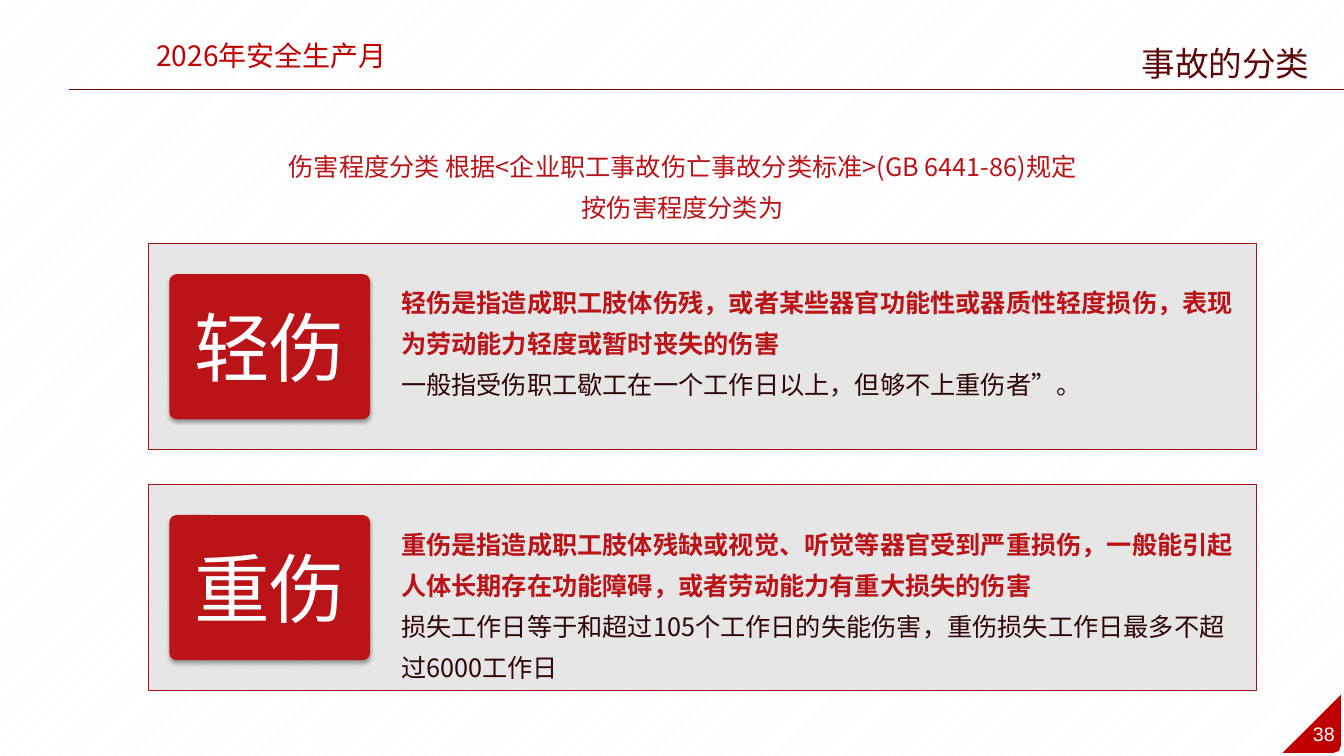
from lxml import etree
from pptx import Presentation
from pptx import util as u
from pptx.dml.color import RGBColor
from pptx.enum import dml, shapes, text
from pptx.oxml import ns

COLORS = {
    "white": "FFFFFF",
    "hatch": "F2F2F2",
    "panel": "D9D9D9",
    "panel_line": "A71116",
    "red": "BA1318",
    "bright_red": "C00000",
    "rule": "7C0D10",
    "title": "5D090C",
    "body": "2E0506",
    "shadow": "000000",
}
CHINESE_FONT = "Noto Sans CJK SC"
CENTER = text.PP_ALIGN.CENTER
LEFT = text.PP_ALIGN.LEFT

CARDS = [
    ("轻伤", 2.42, 2.7, 1.28,
     "轻伤是指造成职工肢体伤残，或者某些器官功能性或器质性轻度损伤，表现为劳动能力轻度或暂时丧失的伤害",
     "一般指受伤职工歇工在一个工作日以上，但够不上重伤者”。"),
    ("重伤", 4.81, 5.1, 1.69,
     "重伤是指造成职工肢体残缺或视觉、听觉等器官受到严重损伤，一般能引起人体长期存在功能障碍，或者劳动能力有重大损失的伤害",
     "损失工作日等于和超过105个工作日的失能伤害，重伤损失工作日最多不超过6000工作日"),
]


def rgb(name):
    return RGBColor.from_string(COLORS[name])


def box(*lengths):
    return [u.Inches(length) for length in lengths]


def add_element(parent, tag, **attributes):
    return etree.SubElement(parent, ns.qn(tag), attributes)


def format_paragraph(paragraph, size, color, bold=False, align=LEFT,
                     spacing=None, font_name=CHINESE_FONT):
    paragraph.alignment = align
    if spacing:
        paragraph.line_spacing = spacing
    for run in paragraph.runs:
        run.font.size = u.Pt(size)
        run.font.bold = bold
        run.font.color.rgb = rgb(color)
        run.font.name = font_name
        add_element(run.font._element, "a:ea", typeface=font_name)


def add_text(slide, position, lines, size, wrap=True, **options):
    text_frame = slide.shapes.add_textbox(*box(*position)).text_frame
    text_frame.word_wrap = wrap
    text_frame.auto_size = text.MSO_AUTO_SIZE.SHAPE_TO_FIT_TEXT
    text_frame.text = "\n".join(line for line, color, bold in lines)
    for paragraph, (line, color, bold) in zip(text_frame.paragraphs, lines):
        format_paragraph(paragraph, size, color, bold, **options)


def add_filled_shape(slide, kind, position, color):
    shape = slide.shapes.add_shape(kind, *box(*position))
    shape.shadow.inherit = False
    shape.fill.solid()
    shape.fill.fore_color.rgb = rgb(color)
    shape.line.fill.background()
    return shape


def add_panel(slide, top):
    panel = add_filled_shape(slide, shapes.MSO_SHAPE.RECTANGLE,
                             (1.47, top, 10.99, 2.04), "panel")
    panel.line.color.rgb = rgb("panel_line")
    panel.line.width = u.Pt(0.75)
    fill_color = panel._element.spPr.find(ns.qn("a:solidFill"))[0]
    add_element(fill_color, "a:alpha", val="64000")


def add_badge(slide, top, label):
    badge = add_filled_shape(slide, shapes.MSO_SHAPE.ROUNDED_RECTANGLE,
                             (1.68, top, 1.99, 1.44), "red")
    badge.adjustments[0] = 0.05
    effects = badge._element.spPr.find(ns.qn("a:effectLst"))
    shadow = add_element(effects, "a:outerShdw", blurRad=str(u.Pt(3.1)),
                         dist=str(u.Pt(1.8)), dir="5400000", rotWithShape="0")
    shadow_color = add_element(shadow, "a:srgbClr", val=COLORS["shadow"])
    add_element(shadow_color, "a:alpha", val="35000")
    badge.text_frame.text = label
    badge.text_frame.vertical_anchor = text.MSO_ANCHOR.MIDDLE
    format_paragraph(badge.text_frame.paragraphs[0], 54, "white", align=CENTER)


def add_card(slide, label, top, text_top, text_height, definition, detail):
    add_panel(slide, top)
    add_badge(slide, top + 0.3, label)
    add_text(slide, (3.88, text_top, 8.48, text_height),
             [(definition, "red", True), (detail, "body", False)],
             18, spacing=1.35)


def add_header_rule(slide):
    rule = slide.shapes.add_connector(shapes.MSO_CONNECTOR.STRAIGHT,
                                      *box(0.68, 0.89, 13.33, 0.89))
    rule.line.color.rgb = rgb("rule")
    rule.line.width = u.Pt(0.75)
    add_element(rule._element.spPr, "a:effectLst")


def add_page_corner(slide):
    outline = [(13.3, 6.89), (13.3, 7.39), (13.28, 7.45), (13.22, 7.47), (12.72, 7.47)]
    points = [box(*point) for point in outline]
    builder = slide.shapes.build_freeform(*points[0])
    builder.add_line_segments(points[1:], close=True)
    corner = builder.convert_to_shape()
    corner.shadow.inherit = False
    corner.fill.solid()
    corner.fill.fore_color.rgb = rgb("bright_red")
    corner.line.fill.background()
    add_text(slide, (12.91, 7.11, 0.44, 0.34), [("38", "white", False)], 14,
             wrap=False, align=CENTER, font_name="Arial")


def set_background(slide):
    fill = slide.background.fill
    fill.patterned()
    fill.pattern = dml.MSO_PATTERN.PERCENT_5
    fill.fore_color.rgb = rgb("hatch")
    fill.back_color.rgb = rgb("white")


def main():
    presentation = Presentation()
    presentation.slide_width = u.Inches(13.33)
    presentation.slide_height = u.Inches(7.5)
    slide = presentation.slides.add_slide(presentation.slide_layouts[6])
    set_background(slide)
    add_header_rule(slide)
    add_page_corner(slide)
    add_text(slide, (0.98, 0.33, 3.43, 0.44),
             [("2026年安全生产月", "bright_red", False)], 20, align=CENTER)
    for card in CARDS:
        add_card(slide, *card)
    add_text(slide, (2.32, 1.35, 8.9, 0.89),
             [("伤害程度分类 根据<企业职工事故伤亡事故分类标准>(GB 6441-86)规定", "red", False),
              ("按伤害程度分类为", "red", False)],
             18, align=CENTER, spacing=1.35)
    add_text(slide, (10.98, 0.38, 2.35, 0.5),
             [("事故的分类", "title", False)], 24, align=CENTER)
    presentation.save("out.pptx")


if __name__ == "__main__":
    main()
